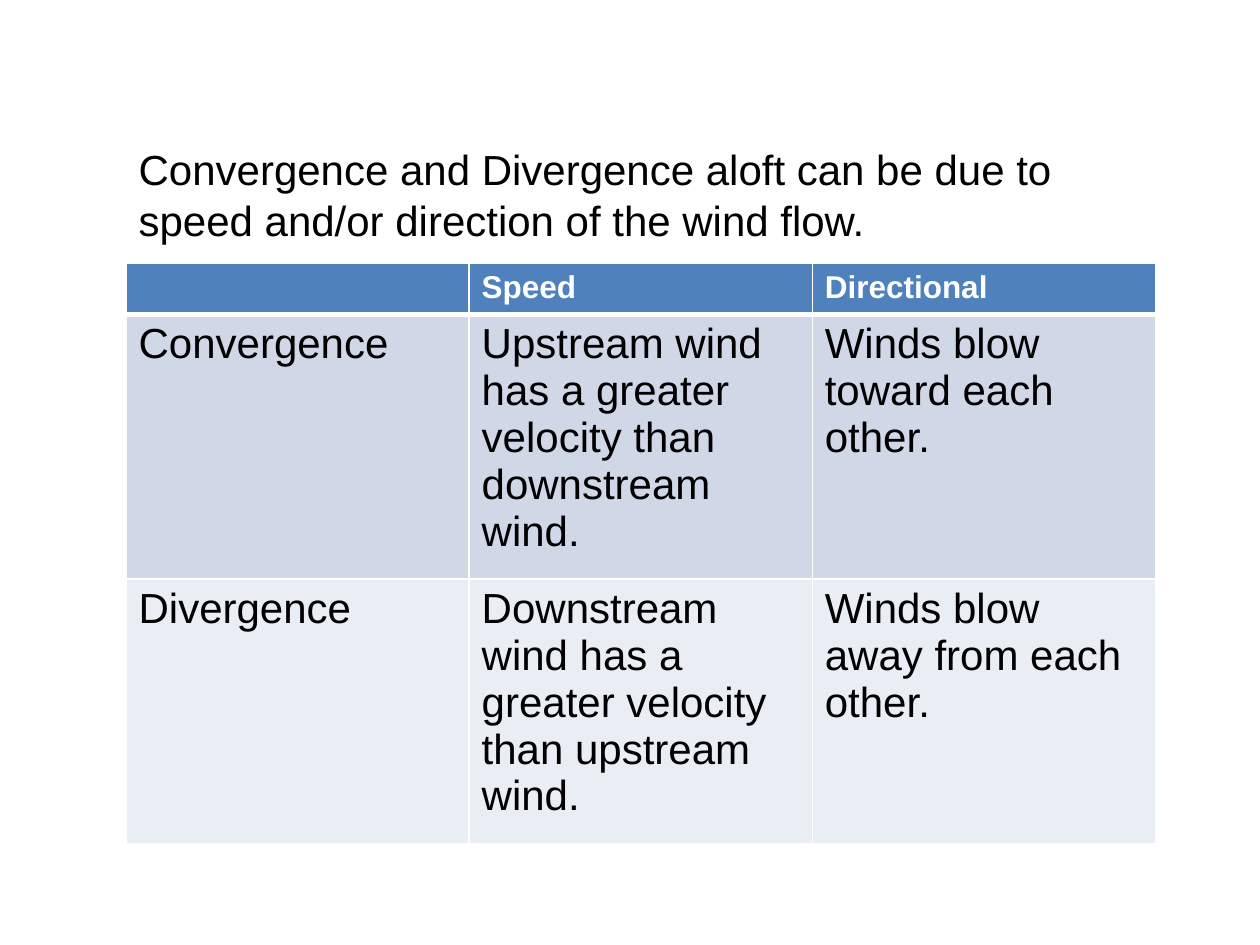
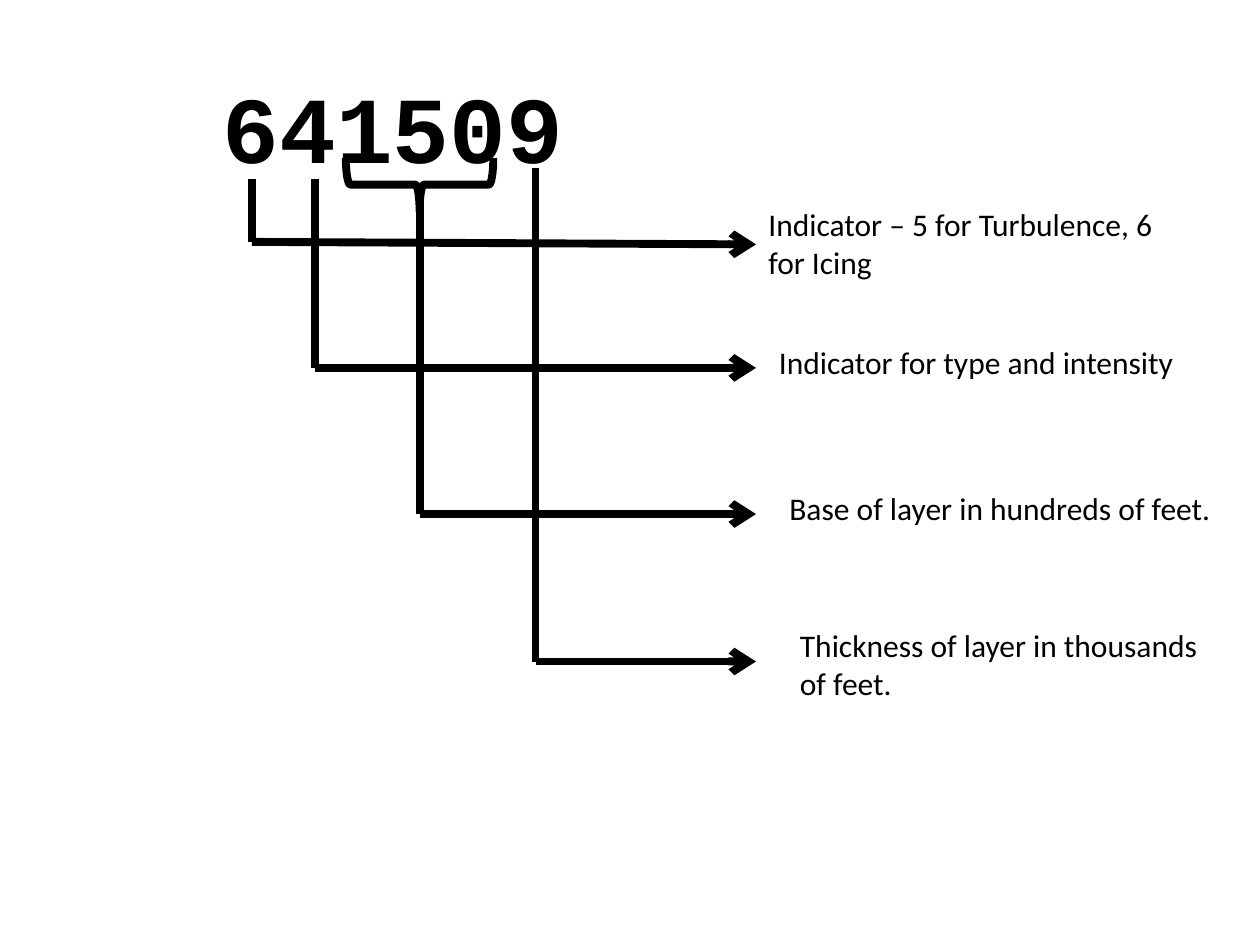
from lxml import etree
from pptx import Presentation
from pptx.dml.color import RGBColor
from pptx.enum.shapes import MSO_CONNECTOR, MSO_SHAPE
from pptx.enum.text import MSO_ANCHOR, MSO_AUTO_SIZE, PP_ALIGN
from pptx.oxml.ns import qn
from pptx.util import Inches, Pt

BLACK = RGBColor(0x00, 0x00, 0x00)
WHITE = RGBColor(0xFF, 0xFF, 0xFF)
HEADER_BLUE = RGBColor(0x4F, 0x81, 0xBD)
BANDS = (RGBColor(0xD0, 0xD8, 0xE8), RGBColor(0xE9, 0xED, 0xF4))

STRAIGHT = MSO_CONNECTOR.STRAIGHT
RIGHT_BRACE = MSO_SHAPE.RIGHT_BRACE
TOP = MSO_ANCHOR.TOP
LEFT = PP_ALIGN.LEFT
NO_FIT = MSO_AUTO_SIZE.NONE

TITLE_ONLY, BLANK = 5, 6
STROKE = Pt(4.5)
HEADER_HEIGHT, ROW_HEIGHT = 0.4, 2.1
ARROW_END = 6

WIND_TABLE = (
    ("", "Speed", "Directional"),
    ("Convergence", "Upstream wind has a greater velocity than downstream wind.",
     "Winds blow toward each other."),
    ("Divergence", "Downstream wind has a greater velocity than upstream wind.",
     "Winds blow away from each other."),
)

CODE_PARTS = (
    (2, 1.42, 1.92, 1.94, (1.58, 3.25, 0.71), "Indicator – 5 for Turbulence, 6 for Icing"),
    (2.5, 1.42, 2.92, 2.92, (2.67, 3.58, 0.4), "Indicator for type and intensity"),
    (3.33, 1.58, 4.08, 4.08, (3.83, 3.58, 0.71), "Base of layer in hundreds of feet."),
    (4.25, 1.33, 5.25, 5.25, (4.92, 3.58, 0.71), "Thickness of layer in thousands of feet."),
)


class Deck:
    """Holds the shared style and the slide being drawn."""

    def __init__(self):
        self.prs = Presentation()
        self.prs.slide_width, self.prs.slide_height = Inches(10), Inches(7.5)
        self.slide = None

    def new_slide(self, layout):
        self.slide = self.prs.slides.add_slide(self.prs.slide_layouts[layout])

    def styled_run(self, frame, text, size, font, color=BLACK, bold=False, spacing=None):
        paragraph = frame.paragraphs[0]
        paragraph.alignment = LEFT
        if spacing:
            paragraph.line_spacing = Pt(spacing)
        run = paragraph.add_run()
        run.text = text
        run.font.size, run.font.name, run.font.bold = Pt(size), font, bold
        run.font.color.rgb = color

    def title(self, box, text):
        heading = self.slide.shapes.title
        heading.left, heading.top, heading.width, heading.height = map(Inches, box)
        frame = heading.text_frame
        frame.vertical_anchor, frame.auto_size, frame.word_wrap = TOP, NO_FIT, True
        self.styled_run(frame, text, 24, "Arial", spacing=29.2)

    def text(self, box, text, size, font, bold=False, wrap=True):
        frame = self.slide.shapes.add_textbox(*map(Inches, box)).text_frame
        frame.word_wrap = wrap
        self.styled_run(frame, text, size, font, bold=bold)

    def line(self, start, end, arrow=False):
        connector = self.slide.shapes.add_connector(STRAIGHT, *map(Inches, start + end))
        connector.line.color.rgb, connector.line.width = BLACK, STROKE
        properties = connector._element.spPr
        if arrow:
            etree.SubElement(properties.find(qn("a:ln")), qn("a:tailEnd"), type="arrow")
        etree.SubElement(properties, qn("a:effectLst"))

    def brace(self, box):
        brace = self.slide.shapes.add_shape(RIGHT_BRACE, *map(Inches, box))
        brace.rotation = 90
        brace.shadow.inherit = False
        brace.fill.background()
        brace.line.color.rgb, brace.line.width = BLACK, STROKE

    def cell_borders(self, cell, widths):
        for side, width in zip("LRTB", widths):
            border = etree.SubElement(cell._tc.get_or_add_tcPr(), qn(f"a:ln{side}"), w=str(int(Pt(width))))
            fill = etree.SubElement(border, qn("a:solidFill"))
            etree.SubElement(fill, qn("a:srgbClr"), val=str(WHITE))

    def table(self, left, top, width, rows):
        height = HEADER_HEIGHT + ROW_HEIGHT * (len(rows) - 1)
        grid = self.slide.shapes.add_table(
            len(rows), len(rows[0]), *map(Inches, (left, top, width, height))).table
        for r, row in enumerate(rows):
            header = r == 0
            grid.rows[r].height = Inches(HEADER_HEIGHT if header else ROW_HEIGHT)
            for c, text in enumerate(row):
                cell = grid.cell(r, c)
                self.cell_borders(cell, (1, 1, 3 if r == 1 else 1, 3 if header else 1))
                cell.fill.solid()
                cell.fill.fore_color.rgb = HEADER_BLUE if header else BANDS[(r - 1) % 2]
                if header and text:
                    self.styled_run(cell.text_frame, text, 18, "Arial", WHITE, bold=True)
                elif text:
                    self.styled_run(cell.text_frame, text, 24, "Arial", spacing=26.8)


def wind_flow_slide(deck):
    """Compare convergence and divergence by speed and direction."""
    deck.new_slide(TITLE_ONLY)
    deck.title((1, 1.08, 8.25, 0.91),
               "Convergence and Divergence aloft can be due to speed and/or direction of the wind flow.")
    deck.table(1, 2.09, 8.17, WIND_TABLE)


def layer_code_slide(deck):
    """Explain each part of the six-digit layer code."""
    deck.new_slide(BLANK)
    deck.text((1.67, 0.5, 2.93, 1.01), "641509", 54, "Courier New", bold=True, wrap=False)
    deck.brace((3.12, 0.88, 0.42, 1.17))
    for i, (x, top, bend, end, (label_top, width, height), meaning) in enumerate(CODE_PARTS):
        deck.line((x, top), (x, bend))
        deck.line((x, bend), (ARROW_END, end), arrow=True)
        deck.text((ARROW_END + i / 12, label_top, width, height), meaning, 18, "Calibri")


def main():
    """Build both slides and save them."""
    deck = Deck()
    wind_flow_slide(deck)
    layer_code_slide(deck)
    deck.prs.save("out.pptx")


if __name__ == "__main__":
    main()
